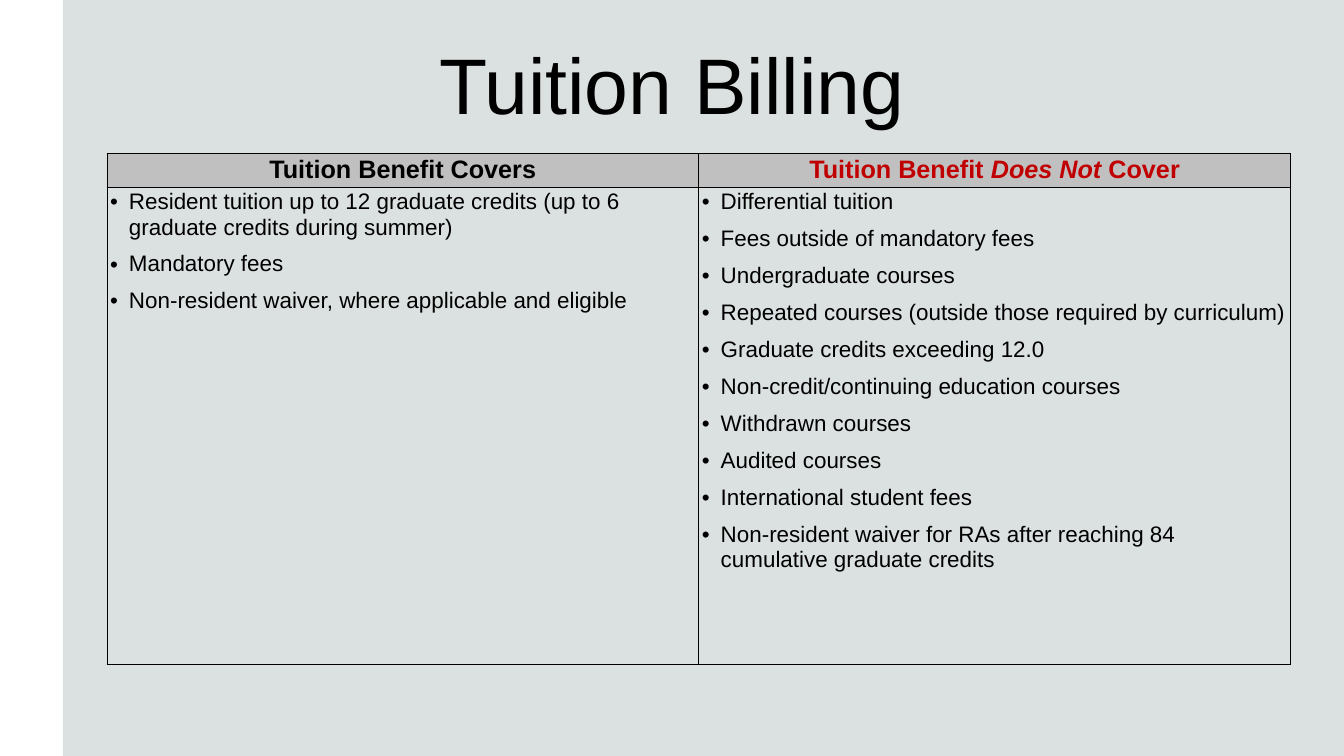
import lxml.etree
import pptx
import pptx.dml.color
import pptx.enum.shapes
import pptx.enum.text
import pptx.oxml.ns
import pptx.util

Pt = pptx.util.Pt
RGBColor = pptx.dml.color.RGBColor
qn = pptx.oxml.ns.qn
CENTER = pptx.enum.text.PP_ALIGN.CENTER
MIDDLE = pptx.enum.text.MSO_ANCHOR.MIDDLE

BLACK = RGBColor(0x00, 0x00, 0x00)
RED = RGBColor(0xC0, 0x00, 0x00)
SILVER = RGBColor(0xC0, 0xC0, 0xC0)
PALE_GREEN = RGBColor(0xDB, 0xE1, 0xE0)

SLIDE_WIDTH, SLIDE_HEIGHT = 1920.24, 1080
TITLE_FORMAT = {"name": "Arial", "size": Pt(112.5)}
HEADER_FORMAT = {"name": "Arial", "size": Pt(36), "bold": True}
ITEM_FORMAT = {"name": "Arial", "size": Pt(32), "bold": False}
CELL_MARGINS = {"margin_left": Pt(4.5), "margin_right": Pt(4.5),
                "margin_top": Pt(2.88), "margin_bottom": Pt(2.88)}
ROW_HEIGHTS = (47.2, 681)

COLUMNS = [
    {
        "color": BLACK,
        "header": [("Tuition Benefit Covers", False)],
        "items": [
            "Resident tuition up to 12 graduate credits (up to 6 graduate credits during summer)",
            "Mandatory fees",
            "Non-resident waiver, where applicable and eligible",
        ],
    },
    {
        "color": RED,
        "header": [("Tuition Benefit ", False), ("Does Not ", True), ("Cover", False)],
        "items": [
            "Differential tuition",
            "Fees outside of mandatory fees",
            "Undergraduate courses",
            "Repeated courses (outside those required by curriculum)",
            "Graduate credits exceeding 12.0",
            "Non-credit/continuing education courses",
            "Withdrawn courses",
            "Audited courses",
            "International student fees",
            "Non-resident waiver for RAs after reaching 84 cumulative graduate credits",
        ],
    },
]


def apply_format(target, values):
    """Set every attribute named in values on the target."""
    for name, value in values.items():
        setattr(target, name, value)


def add_run(paragraph, text, values, color, italic=False):
    """Append a formatted run to the paragraph."""
    run = paragraph.add_run()
    run.text = text
    apply_format(run.font, {**values, "italic": italic})
    run.font.color.rgb = color


def add_panel(slide, left, top, width, height):
    """Place the pale panel behind the content."""
    panel = slide.shapes.add_shape(pptx.enum.shapes.MSO_SHAPE.RECTANGLE,
                                   Pt(left), Pt(top), Pt(width), Pt(height))
    panel.shadow.inherit = False
    panel.fill.solid()
    panel.fill.fore_color.rgb = PALE_GREEN
    panel.line.fill.background()


def add_title(slide, left, top, width, height):
    """Place the centred slide title."""
    frame = slide.shapes.add_textbox(Pt(left), Pt(top), Pt(width), Pt(height)).text_frame
    margins = dict.fromkeys(CELL_MARGINS, Pt(4.5))
    apply_format(frame, {**margins, "word_wrap": True, "vertical_anchor": MIDDLE})
    paragraph = frame.paragraphs[0]
    paragraph.alignment = CENTER
    add_run(paragraph, "Tuition Billing", TITLE_FORMAT, BLACK)


def add_borders(cell):
    """Draw a thin black line on each side of the cell."""
    properties = cell._tc.get_or_add_tcPr()
    for index, side in enumerate(("a:lnL", "a:lnR", "a:lnT", "a:lnB")):
        line = lxml.etree.Element(qn(side), w=str(Pt(1)))
        fill = lxml.etree.SubElement(line, qn("a:solidFill"))
        lxml.etree.SubElement(fill, qn("a:srgbClr"), val=str(BLACK))
        properties.insert(index, line)


def fill_header(cell, column):
    """Write a column heading on a grey fill."""
    cell.fill.solid()
    cell.fill.fore_color.rgb = SILVER
    paragraph = cell.text_frame.paragraphs[0]
    paragraph.alignment = CENTER
    for text, italic in column["header"]:
        add_run(paragraph, text, HEADER_FORMAT, column["color"], italic)


def fill_items(cell, items):
    """Write a bulleted list on a clear fill."""
    cell.fill.background()
    frame = cell.text_frame
    for index, item in enumerate(items):
        paragraph = frame.add_paragraph() if index else frame.paragraphs[0]
        paragraph.space_before = Pt(16.9 if index else 0)
        properties = paragraph._p.get_or_add_pPr()
        properties.set("marL", str(Pt(27)))
        properties.set("indent", str(Pt(-27)))
        lxml.etree.SubElement(properties, qn("a:buFont"), typeface="Arial")
        lxml.etree.SubElement(properties, qn("a:buChar"), char="•")
        add_run(paragraph, item, ITEM_FORMAT, BLACK)


def add_benefit_table(slide, left, top, width):
    """Place the table of covered and uncovered charges."""
    table = slide.shapes.add_table(len(ROW_HEIGHTS), len(COLUMNS), Pt(left), Pt(top),
                                   Pt(width), Pt(sum(ROW_HEIGHTS))).table
    apply_format(table, {"first_row": False, "horz_banding": False})
    for row, height in zip(table.rows, ROW_HEIGHTS):
        row.height = Pt(height)
    for index, column in enumerate(COLUMNS):
        table.columns[index].width = Pt(width / len(COLUMNS))
        header, body = table.cell(0, index), table.cell(1, index)
        fill_header(header, column)
        fill_items(body, column["items"])
        for cell in (header, body):
            apply_format(cell, CELL_MARGINS)
            add_borders(cell)


def main():
    """Build and save the slide."""
    presentation = pptx.Presentation()
    apply_format(presentation, {"slide_width": Pt(SLIDE_WIDTH), "slide_height": Pt(SLIDE_HEIGHT)})
    slide = presentation.slides.add_slide(presentation.slide_layouts[6])
    add_panel(slide, 90, 0, SLIDE_WIDTH - 90, SLIDE_HEIGHT)
    add_title(slide, 133.2, 28, 1653.8, 180)
    add_benefit_table(slide, 152.8, 219, 1691)
    presentation.save("out.pptx")


if __name__ == "__main__":
    main()
